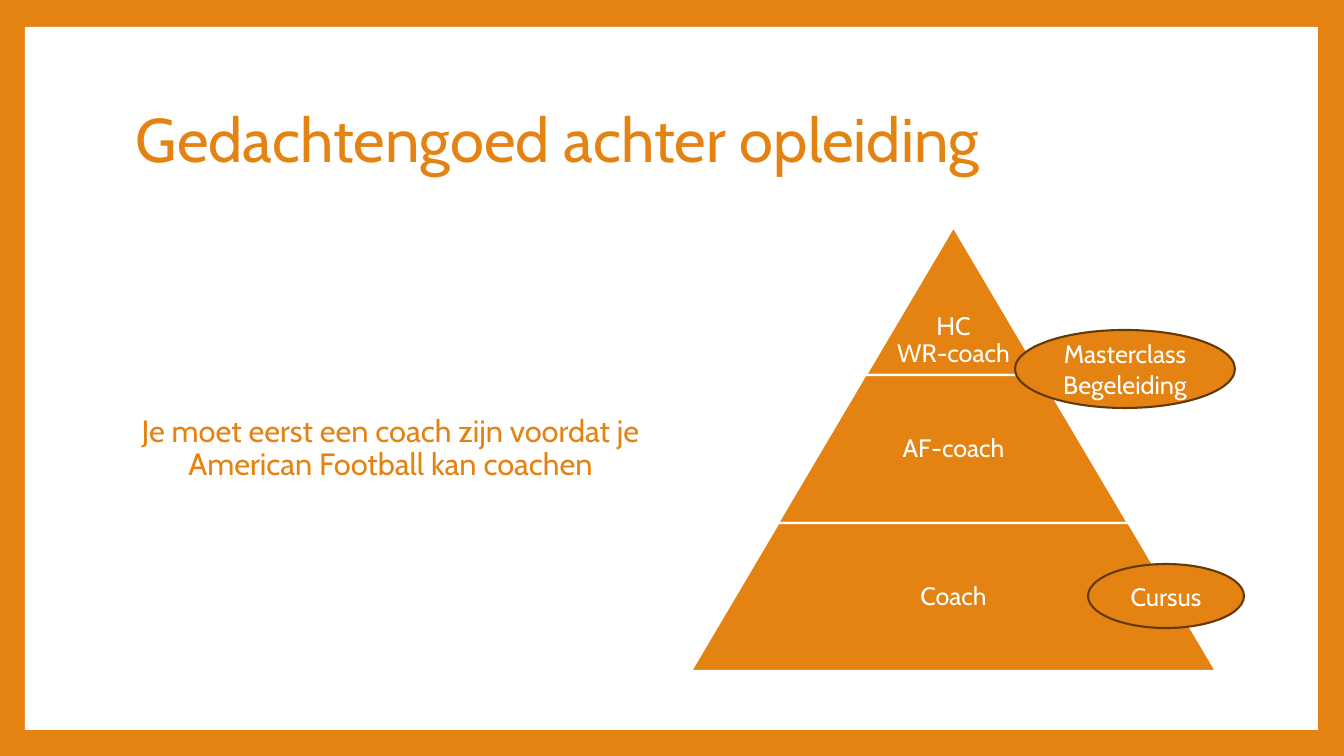
from pptx import Presentation
from pptx import util as u
from pptx.dml.color import RGBColor
from pptx.enum import shapes, text

PX = u.Inches(1) / 100.8
ORANGE = RGBColor(0xE4, 0x83, 0x12)
BROWN = RGBColor(0x64, 0x39, 0x08)
WHITE = RGBColor(0xFF, 0xFF, 0xFF)
FONT = "Cabin"

TIER_LABELS = ["HC\vWR-coach", "AF-coach", "Coach"]
PYRAMID_CENTER, PYRAMID_TOP = 953, 227
TIER_STEP, TIER_HEIGHT = 175, 148


def px(*lengths):
    return [u.Emu(round(length * PX)) for length in lengths]


def write(box, wording, size, color, align, spacing=None):
    frame = box.text_frame
    frame.word_wrap = True
    frame.vertical_anchor = text.MSO_ANCHOR.MIDDLE
    for number, line in enumerate(wording.split("\n")):
        para = frame.paragraphs[0] if number == 0 else frame.add_paragraph()
        para.text = line
        para.alignment = align
        para.line_spacing = spacing
        for span in para.runs:
            span.font.name = FONT
            span.font.size = u.Pt(size)
            span.font.color.rgb = color


def add_text(page, area, wording, size, color, align, margin=None):
    box = page.shapes.add_textbox(*px(*area))
    write(box, wording, size, color, align, 0.9)
    if margin is not None:
        frame = box.text_frame
        frame.margin_left = frame.margin_right = px(margin)[0]
        frame.margin_top = frame.margin_bottom = px(margin)[0]
    return box


def add_figure(page, kind, area, fill, line=None):
    figure = page.shapes.add_shape(kind, *px(*area))
    figure.shadow.inherit = False
    figure.fill.solid()
    figure.fill.fore_color.rgb = fill
    if line is None:
        figure.line.fill.background()
    else:
        figure.line.color.rgb = line
        figure.line.width = u.Pt(1.5)
    return figure


def add_tier(page, level, label):
    width = TIER_STEP * (level + 1)
    top = PYRAMID_TOP + TIER_HEIGHT * level
    tier = add_figure(page, shapes.MSO_SHAPE.TRAPEZOID,
                      (PYRAMID_CENTER - width // 2, top, width, TIER_HEIGHT),
                      ORANGE, WHITE)
    tier.adjustments[0] = TIER_STEP / 2 / TIER_HEIGHT

    # The label of the tip sits in its wide lower part
    label_top, label_height = (top + 86, 56) if level == 0 else (top, TIER_HEIGHT)
    label_width = max(TIER_STEP, width * 65 // 100)
    add_text(page, (PYRAMID_CENTER - label_width // 2, label_top, label_width, label_height),
             label, 18, WHITE, text.PP_ALIGN.CENTER, 3)


def add_callout(page, area, wording):
    oval = add_figure(page, shapes.MSO_SHAPE.OVAL, area, ORANGE, BROWN)
    write(oval, wording, 18, WHITE, text.PP_ALIGN.CENTER)


def main():
    deck = Presentation()
    deck.slide_width, deck.slide_height = px(1344, 756)
    page = deck.slides.add_slide(deck.slide_layouts[6])

    # Orange border around a white panel
    page.background.fill.solid()
    page.background.fill.fore_color.rgb = ORANGE
    add_figure(page, shapes.MSO_SHAPE.RECTANGLE, (25, 27, 1293, 703), WHITE)

    # Title and statement
    add_text(page, (126, 68, 1089, 149), "Gedachtengoed achter opleiding",
             44, ORANGE, text.PP_ALIGN.LEFT)
    statement = add_text(page, (126, 227, 524, 444),
                         "Je moet eerst een coach zijn voordat je American Football kan coachen",
                         22, ORANGE, text.PP_ALIGN.CENTER)
    statement.text_frame.margin_left = px(15)[0]
    statement.text_frame.paragraphs[0].space_before = u.Pt(14)

    # Pyramid
    for level, label in enumerate(TIER_LABELS):
        add_tier(page, level, label)

    # Callouts
    add_callout(page, (1088, 564, 156, 64), "Cursus")
    add_callout(page, (1015, 330, 220, 78), "Masterclass\nBegeleiding")

    deck.save("out.pptx")


if __name__ == "__main__":
    main()
